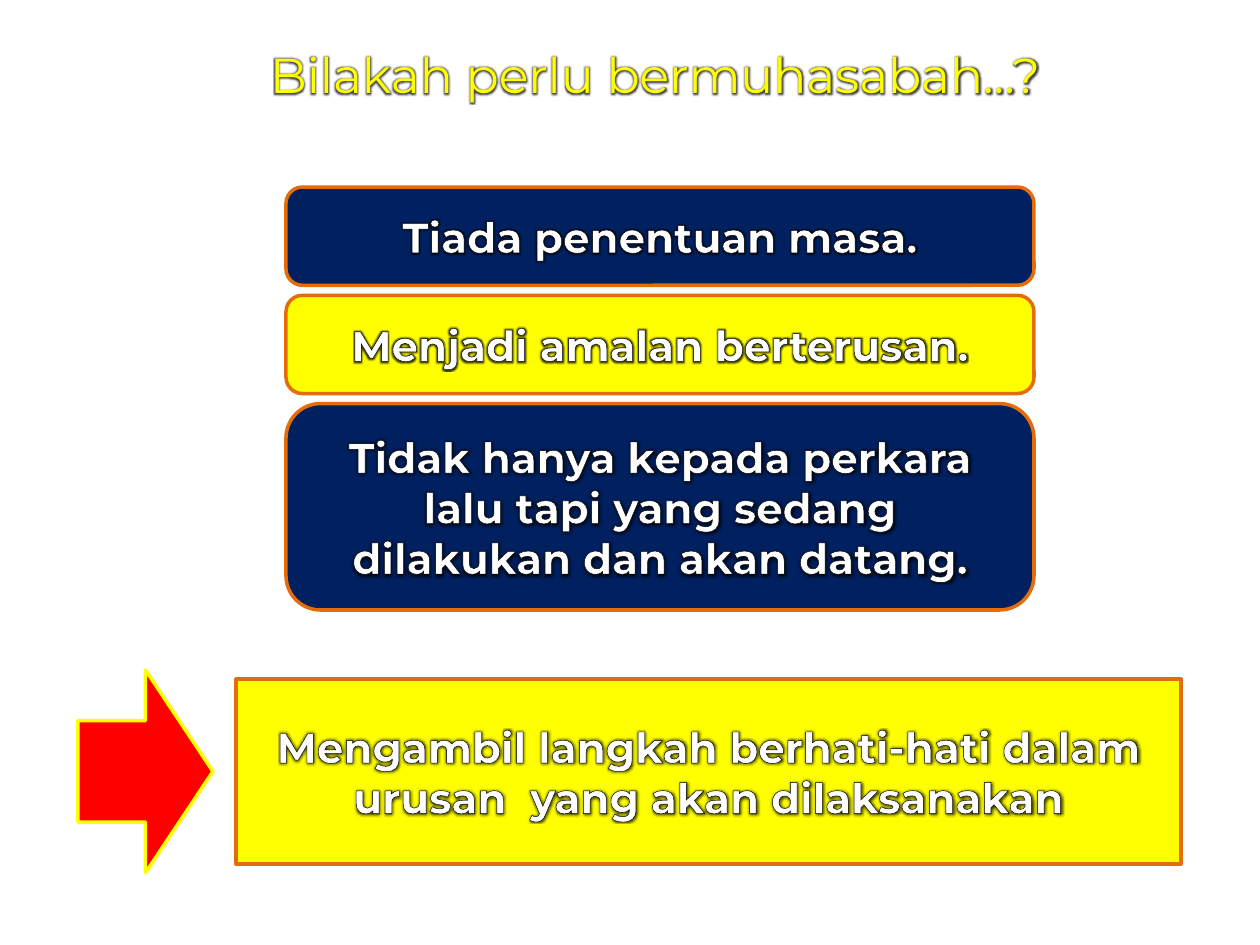
from lxml import etree
from pptx import Presentation
from pptx.dml.color import RGBColor
from pptx.enum.shapes import MSO_SHAPE
from pptx.enum.text import MSO_ANCHOR, PP_ALIGN
from pptx.oxml.ns import qn
from pptx.util import Emu, Pt

ROUNDED = MSO_SHAPE.ROUNDED_RECTANGLE
RECTANGLE = MSO_SHAPE.RECTANGLE
ARROW = MSO_SHAPE.RIGHT_ARROW
MIDDLE = MSO_ANCHOR.MIDDLE
CENTER = PP_ALIGN.CENTER

FONT = "Montserrat"
NAVY, YELLOW, ORANGE = "002060", "FFFF00", "E46C0A"
RED, WHITE, BLACK = "FF0000", "FFFFFF", "000000"


def px(length):
    return Emu(round(length * 914400 / 126))


def color(value):
    return RGBColor.from_string(value)


def add_solid_fill(parent, value, alpha=100):
    fill = etree.SubElement(parent, qn("a:solidFill"))
    add_color(fill, value, alpha)


def add_color(parent, value, alpha):
    element = etree.SubElement(parent, qn("a:srgbClr"), val=value)
    if alpha < 100:
        etree.SubElement(element, qn("a:alpha"), val=str(alpha * 1000))


def outline_and_glow(run):
    properties = run.font._element
    outline = etree.Element(qn("a:ln"), w=str(Pt(0.75)))
    add_solid_fill(outline, BLACK)
    properties.insert(0, outline)
    effects = etree.Element(qn("a:effectLst"))
    glow = etree.SubElement(effects, qn("a:glow"), rad=str(Pt(3)))
    add_color(glow, BLACK, 75)
    properties.find(qn("a:solidFill")).addnext(effects)


def write_text(shape, text, size, text_color, bold):
    frame = shape.text_frame
    frame.word_wrap = True
    frame.vertical_anchor = MIDDLE
    frame.text = text
    paragraph = frame.paragraphs[0]
    paragraph.alignment = CENTER
    run = paragraph.runs[0]
    run.font.size = Pt(size)
    run.font.bold = bold
    run.font.color.rgb = color(text_color)
    run.font.name = FONT
    outline_and_glow(run)


def add_panel(slide, kind, box, fill, line, text=None):
    shape = slide.shapes.add_shape(kind, *map(px, box))
    shape.shadow.inherit = False
    shape.fill.solid()
    shape.fill.fore_color.rgb = color(fill)
    shape.line.color.rgb = color(line)
    shape.line.width = Pt(2)
    if text:
        write_text(shape, text, 24, WHITE, True)


def add_title(slide, box, text):
    title = slide.shapes.add_textbox(*map(px, box))
    write_text(title, text, 28, YELLOW, False)


def add_points(slide, box, points):
    left, top, width, height = box
    gap = 10
    unit = (height - gap * (len(points) - 1)) / sum(share for share, _ in points)
    for index, (share, text) in enumerate(points):
        fill = YELLOW if index % 2 else NAVY
        add_panel(slide, ROUNDED, (left, top, width, unit * share), fill, ORANGE, text)
        top += unit * share + gap


def add_conclusion(slide, box, text):
    left, top, width, height = box
    arrow_width, text_left, margin = 135, 158, 9
    add_panel(slide, ARROW, (left, top, arrow_width, height), RED, YELLOW)
    text_box = (left + text_left, top + margin, width - text_left, height - 2 * margin)
    add_panel(slide, RECTANGLE, text_box, YELLOW, ORANGE, text)


def main():
    presentation = Presentation()
    presentation.slide_width = px(1260)
    presentation.slide_height = px(945)
    slide = presentation.slides.add_slide(presentation.slide_layouts[6])
    add_title(slide, (168, 20, 974, 108), "Bilakah perlu bermuhasabah…?")
    add_points(slide, (286, 187, 748, 423), [
        (1, "Tiada penentuan masa."),
        (1, "Menjadi amalan berterusan."),
        (2.1, "Tidak hanya kepada perkara lalu tapi yang sedang dilakukan dan akan datang."),
    ])
    add_conclusion(
        slide, (78, 670, 1103, 203),
        "Mengambil langkah berhati-hati dalam urusan  yang akan dilaksanakan",
    )
    presentation.save("out.pptx")


if __name__ == "__main__":
    main()
